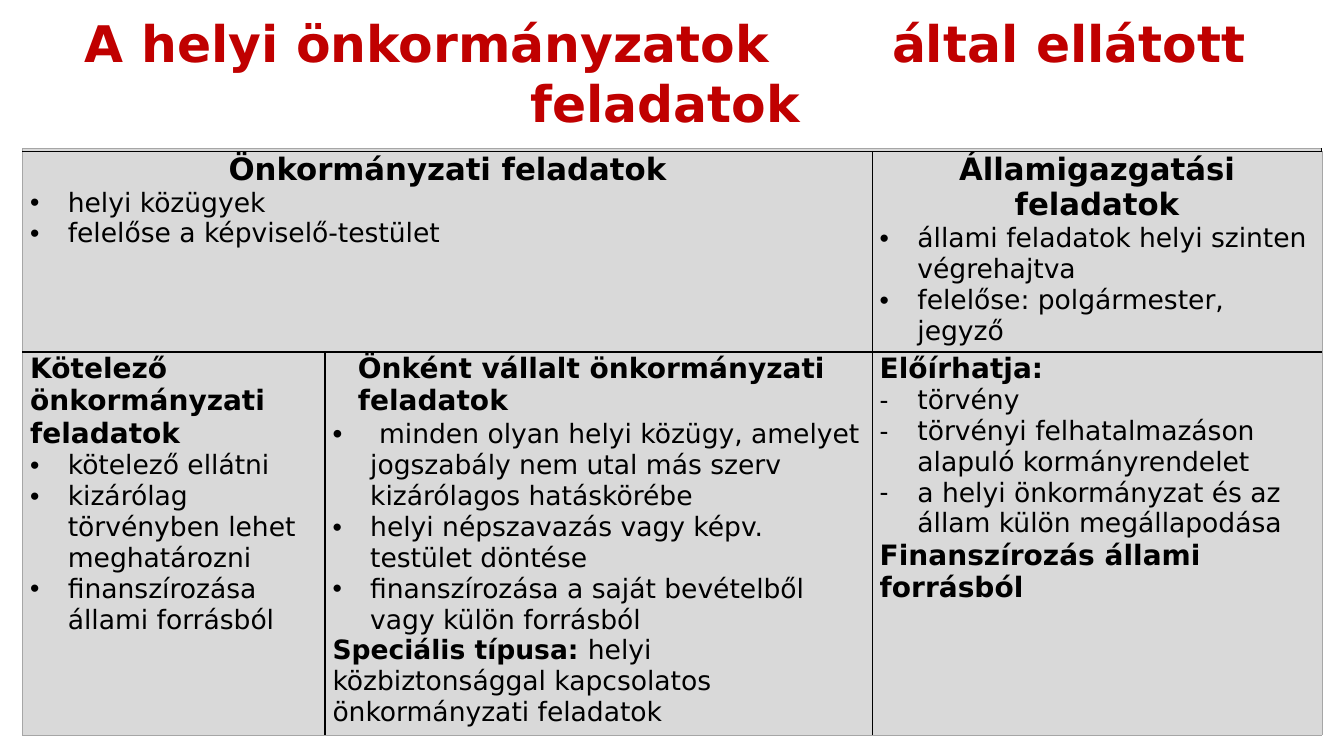
from lxml import etree
from pptx import Presentation
from pptx.dml.color import RGBColor
from pptx.enum import text
from pptx.oxml import ns
from pptx.util import Cm, Pt

# Content: a line is (style, spans), a span is (words, bold, size)
FONT, RED, BLACK, GREY, EDGE = "DejaVu Sans", "C00000", "000000", "D9D9D9", "A6A6A6"
TITLE = ["A helyi önkormányzatok", " ", "által ellátott feladatok"]
TITLE_SIZE, TITLE_GAP = 36, 75


def head(words, size=20, style="plain"):
    return style, [(words, True, size)]


def items(style, *lines):
    return [(style, [(words, False, 19)]) for words in lines]


CELLS = {
    (1, 0): [head("Önkormányzati feladatok", 22, "centre"),
             *items("dot", "helyi közügyek", "felelőse a képviselő-testület")],
    (1, 2): [head("Államigazgatási feladatok", 22, "centre"),
             *items("dot", "állami feladatok helyi szinten végrehajtva",
                    "felelőse: polgármester, jegyző")],
    (2, 0): [head("Kötelező önkormányzati feladatok"),
             *items("dot", "kötelező ellátni", "kizárólag törvényben lehet meghatározni",
                    "finanszírozása állami forrásból")],
    (2, 1): [head("Önként vállalt önkormányzati feladatok", style="indent"),
             ("dot", [(" ", False, 20),
                      ("minden olyan helyi közügy, amelyet jogszabály nem utal más szerv "
                       "kizárólagos hatáskörébe", False, 19)]),
             *items("dot", "helyi népszavazás vagy képv. testület döntése",
                    "finanszírozása a saját bevételből vagy külön forrásból"),
             ("plain", [("Speciális típusa: ", True, 19),
                        ("helyi közbiztonsággal kapcsolatos önkormányzati feladatok",
                         False, 19)])],
    (2, 2): [head("Előírhatja:"),
             *items("dash", "törvény", "törvényi felhatalmazáson alapuló kormányrendelet",
                    "a helyi önkormányzat és az állam külön megállapodása"),
             head("Finanszírozás állami forrásból")],
}
MERGES = [((0, 0), (0, 2)), ((1, 0), (1, 1))]
COLUMNS = [7.62, 13.79, 11.33]
ROWS = [0.08, 5.05, 9.65]

# Style: left margin, first-line indent, bullet
STYLES = {"plain": (0, 0, None), "centre": (0, 0, None), "indent": (0.64, 0, None),
          "dot": (0.95, -0.95, "•"), "dash": (0.95, -0.95, "-")}


def colour(code):
    return RGBColor.from_string(code)


def set_all(target, values):
    for name, value in values.items():
        setattr(target, name, value)


def add_span(para, words, bold, size, code=BLACK):
    span = para.add_run()
    span.text = words
    set_all(span.font, {"name": FONT, "size": Pt(size), "bold": bold})
    span.font.color.rgb = colour(code)
    return span


def add_line(frame, index, style, spans):
    para = frame.add_paragraph() if index else frame.paragraphs[0]
    margin, indent, bullet = STYLES[style]
    para.alignment = text.PP_ALIGN.CENTER if style == "centre" else text.PP_ALIGN.LEFT
    props = para._p.get_or_add_pPr()
    props.set("marL", str(Cm(margin)))
    props.set("indent", str(Cm(indent)))
    if bullet:
        etree.SubElement(props, ns.qn("a:buFont")).set("typeface", "Arial")
        etree.SubElement(props, ns.qn("a:buChar")).set("char", bullet)
    for span in spans:
        add_span(para, *span)


def add_border(cell, side, code, width):
    line = etree.SubElement(cell._tc.get_or_add_tcPr(), ns.qn("a:ln" + side))
    line.set("w", str(Pt(width)))
    fill = etree.SubElement(line, ns.qn("a:solidFill"))
    etree.SubElement(fill, ns.qn("a:srgbClr")).set("val", code)


deck = Presentation()
set_all(deck, {"slide_width": Cm(33.87), "slide_height": Cm(19.05)})
page = deck.slides.add_slide(deck.slide_layouts[6])

# Table
grid = page.shapes.add_table(len(ROWS), len(COLUMNS), Cm(0.57), Cm(3.74),
                             Cm(sum(COLUMNS)), Cm(sum(ROWS))).table
set_all(grid, {"first_row": False, "horz_banding": False})
for column, width in zip(grid.columns, COLUMNS):
    column.width = Cm(width)
for row, height in zip(grid.rows, ROWS):
    row.height = Cm(height)
for start, end in MERGES:
    grid.cell(*start).merge(grid.cell(*end))

last_row, last_column = len(ROWS) - 1, len(COLUMNS) - 1
for r in range(len(ROWS)):
    for c in range(len(COLUMNS)):
        cell = grid.cell(r, c)
        set_all(cell, {"margin_left": Cm(0.19), "margin_right": Cm(0.19),
                       "margin_top": 0, "margin_bottom": 0})
        outer = {"L": c == 0, "R": c == last_column, "T": r == 0, "B": r == last_row}
        for side, is_outer in outer.items():
            add_border(cell, side, *((EDGE, 0.25) if is_outer else (BLACK, 1)))
        cell.fill.solid()
        cell.fill.fore_color.rgb = colour(GREY)
        for index, line in enumerate(CELLS.get((r, c), [])):
            add_line(cell.text_frame, index, *line)
        if r == 0:  # keeps the empty strip thin
            end_mark = etree.SubElement(cell.text_frame.paragraphs[0]._p, ns.qn("a:endParaRPr"))
            end_mark.set("sz", "100")

# Title, with one widened space as its gap
box = page.shapes.add_textbox(Cm(0.57), Cm(0.18), Cm(32.4), Cm(3.33))
box.text_frame.word_wrap = True
para = box.text_frame.paragraphs[0]
para.alignment = text.PP_ALIGN.CENTER
for words in TITLE:
    span = add_span(para, words, True, TITLE_SIZE, RED)
    if words == " ":
        span.font._element.set("spc", str(TITLE_GAP * 100))

deck.save("out.pptx")
